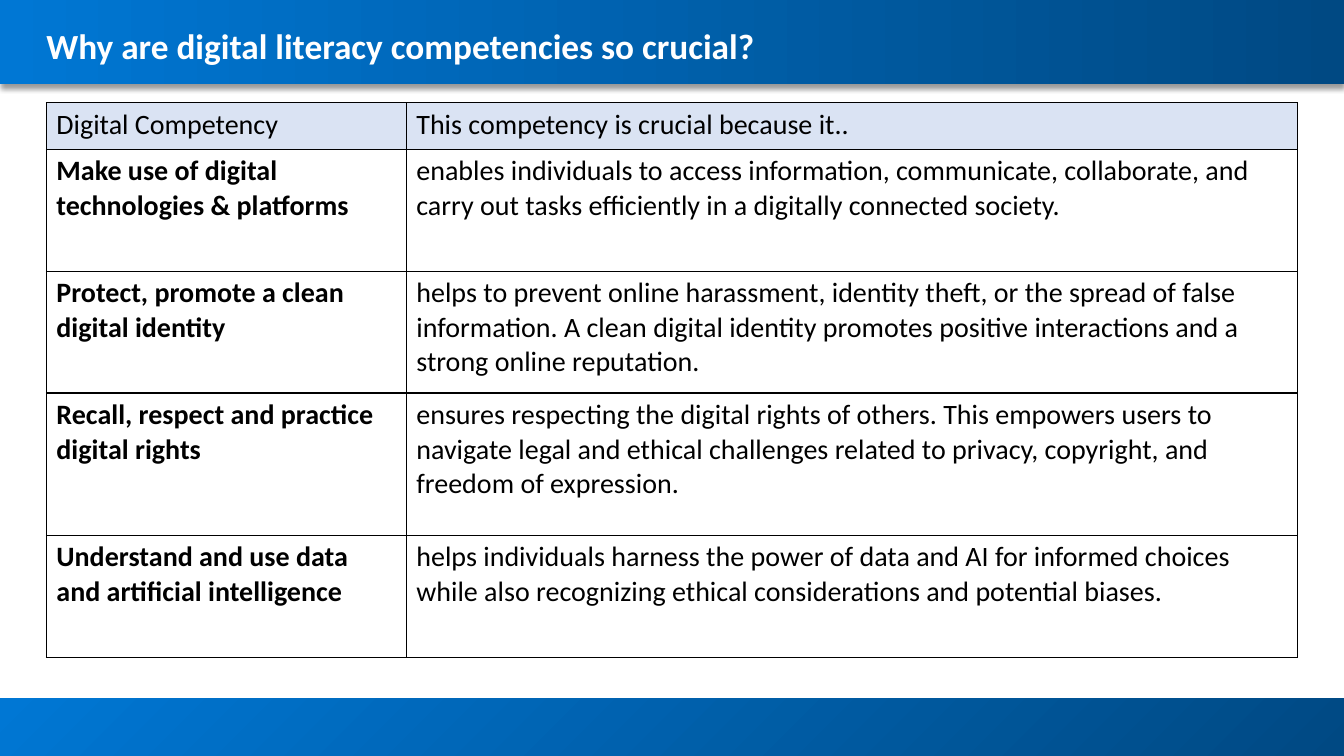
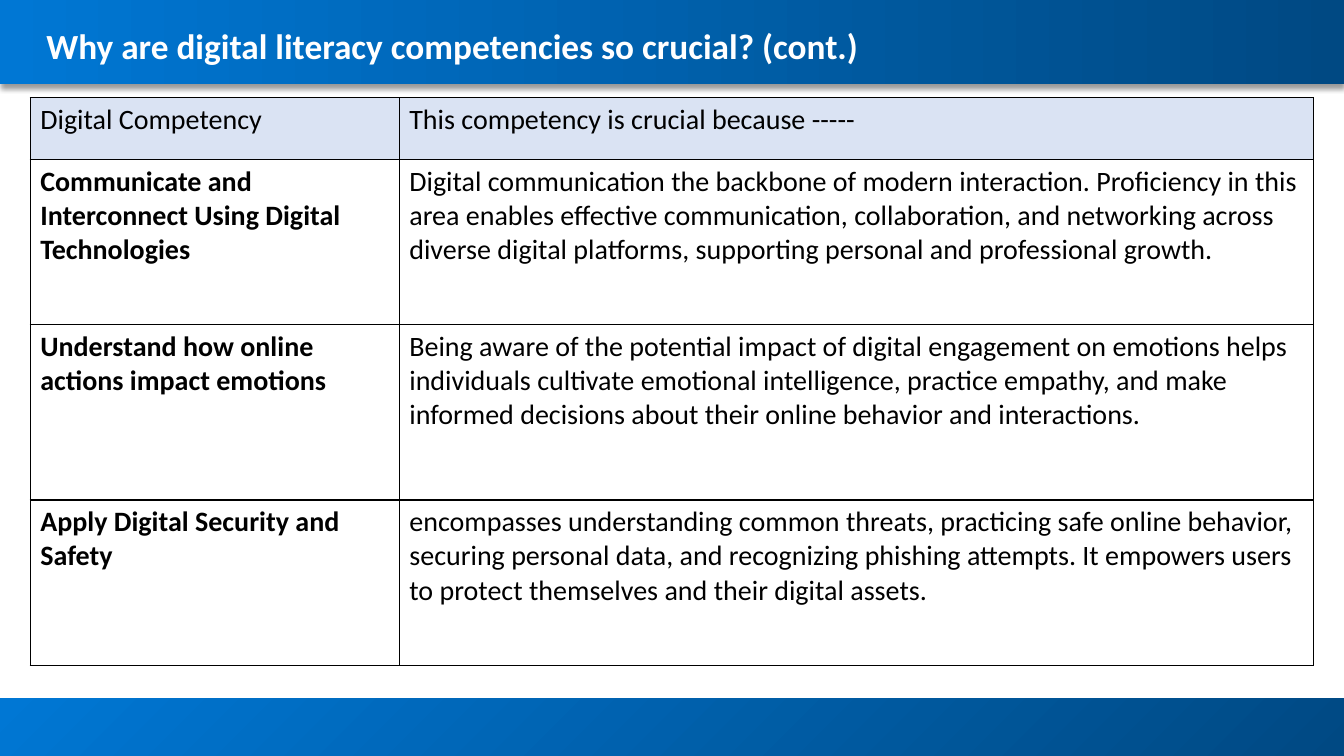
from lxml.etree import SubElement
from pptx import Presentation
from pptx.dml.color import RGBColor
from pptx.enum.shapes import MSO_SHAPE
from pptx.enum.text import MSO_ANCHOR, MSO_AUTO_SIZE, PP_ALIGN
from pptx.oxml import parse_xml
from pptx.oxml.ns import nsdecls, qn
from pptx.util import Inches, Pt

BLUE = RGBColor(0x00, 0x77, 0xD4)
NAVY = RGBColor(0x00, 0x49, 0x83)
PALE = RGBColor(0xDA, 0xE3, 0xF3)
WHITE = RGBColor(0xFF, 0xFF, 0xFF)
BLACK = RGBColor(0x00, 0x00, 0x00)
FONT = "Calibri"
WIDE, HIGH = 13.33, 7.5
HEAD_BOX = (0, 0, WIDE, 0.83)
FOOT_BOX = (0, 6.93, WIDE, 0.57)
TITLE_BOX = (0.46, 0.17, 12.41, 0.5)

TOPIC = "Why are digital literacy competencies so crucial?"
SLIDES = [
    {
        "title": TOPIC,
        "spot": (0.46, 1.02),
        "cols": (3.57, 8.84),
        "tall": (0.46, 1.21, 1.21, 1.41, 1.21),
        "rows": [
            ("Digital Competency", "This competency is crucial because it.."),
            ("Make use of digital technologies & platforms",
             "enables individuals to access information, communicate, collaborate, "
             "and carry out tasks efficiently in a digitally connected society."),
            ("Protect, promote a clean digital identity",
             "helps to prevent online harassment, identity theft, or the spread of "
             "false information. A clean digital identity promotes positive "
             "interactions and a strong online reputation."),
            ("Recall, respect and practice digital rights",
             "ensures respecting the digital rights of others. This empowers users "
             "to navigate legal and ethical challenges related to privacy, "
             "copyright, and freedom of expression."),
            ("Understand and use data and artificial intelligence",
             "helps individuals harness the power of data and AI for informed "
             "choices while also recognizing ethical considerations and potential "
             "biases."),
        ],
    },
    {
        "title": TOPIC + " (cont.)",
        "spot": (0.3, 0.97),
        "cols": (3.66, 9.07),
        "tall": (0.61, 1.64, 1.74, 1.64),
        "rows": [
            ("Digital Competency", "This competency is crucial because -----"),
            ("Communicate and Interconnect Using Digital Technologies",
             "Digital communication the backbone of modern interaction. Proficiency "
             "in this area enables effective communication, collaboration, and "
             "networking across diverse digital platforms, supporting personal and "
             "professional growth."),
            ("Understand how online actions impact emotions",
             "Being aware of the potential impact of digital engagement on emotions "
             "helps individuals cultivate emotional intelligence, practice empathy, "
             "and make informed decisions about their online behavior and "
             "interactions."),
            ("Apply Digital Security and Safety",
             "encompasses understanding common threats, practicing safe online "
             "behavior, securing personal data, and recognizing phishing attempts. "
             "It empowers users to protect themselves and their digital assets."),
        ],
    },
]


def add_run(para, text, size, color, bold):
    run = para.add_run()
    run.text = text
    font = run.font
    font.name, font.size, font.bold = FONT, Pt(size), bold
    font.color.rgb = color


def add_band(slide, box, first, last, angle):
    band = slide.shapes.add_shape(MSO_SHAPE.RECTANGLE, *map(Inches, box))
    band.shadow.inherit = False
    band.line.fill.background()
    band.fill.gradient()
    band.fill.gradient_angle = angle
    for stop, color in zip(band.fill.gradient_stops, (first, last)):
        stop.color.rgb = color
    return band


def add_shadow(shape):
    effects = shape.element.spPr.find(qn("a:effectLst"))
    effects.append(parse_xml(
        f'<a:outerShdw {nsdecls("a")} blurRad="{Pt(4)}" dist="{Pt(3)}" '
        'dir="5400000" algn="t" rotWithShape="0"><a:srgbClr val="000000">'
        '<a:alpha val="40000"/></a:srgbClr></a:outerShdw>'))


def dress_layout(layout, slide):
    """Put the shared bands on the layout, behind its title."""
    for holder in list(layout.placeholders):
        if holder.placeholder_format.idx != 0:
            holder.element.getparent().remove(holder.element)
    foot = add_band(slide, FOOT_BOX, NAVY, BLUE, 135)
    head = add_band(slide, HEAD_BOX, BLUE, NAVY, 0)
    add_shadow(head)
    for spot, band in enumerate((foot, head), start=2):
        layout.shapes.element.insert(spot, band.element)


def set_title(slide, text, box):
    title = slide.shapes.title
    title.left, title.top, title.width, title.height = map(Inches, box)
    frame = title.text_frame
    frame.margin_left = frame.margin_right = 0
    frame.margin_top = frame.margin_bottom = 0
    frame.vertical_anchor = MSO_ANCHOR.MIDDLE
    frame.auto_size = MSO_AUTO_SIZE.NONE
    frame.word_wrap = True
    para = frame.paragraphs[0]
    para.alignment = PP_ALIGN.LEFT
    para.line_spacing = 1.16
    add_run(para, text, 25.2, WHITE, True)


def set_edges(cell):
    props = cell._tc.get_or_add_tcPr()
    for side in ("lnL", "lnR", "lnT", "lnB"):
        line = SubElement(props, qn(f"a:{side}"), w=str(Pt(1)))
        fill = SubElement(line, qn("a:solidFill"))
        SubElement(fill, qn("a:srgbClr"), val=str(BLACK))


def add_grid(slide, spot, cols, tall, rows):
    box = (*spot, sum(cols), sum(tall))
    grid = slide.shapes.add_table(len(rows), len(cols), *map(Inches, box)).table
    grid.first_row = grid.horz_banding = False
    for col, width in zip(grid.columns, cols):
        col.width = Inches(width)
    for row, height in zip(grid.rows, tall):
        row.height = Inches(height)
    for r, texts in enumerate(rows):
        for c, text in enumerate(texts):
            cell = grid.cell(r, c)
            set_edges(cell)
            if r == 0:
                cell.fill.solid()
                cell.fill.fore_color.rgb = PALE
            else:
                cell.fill.background()
            # Competency names are bold below the header row
            add_run(cell.text_frame.paragraphs[0], text, 20, BLACK, r > 0 and c == 0)


def main():
    deck = Presentation()
    deck.slide_width, deck.slide_height = Inches(WIDE), Inches(HIGH)
    layout = deck.slide_layouts[5]
    for page, data in enumerate(SLIDES):
        slide = deck.slides.add_slide(layout)
        if page == 0:
            dress_layout(layout, slide)
        set_title(slide, data["title"], TITLE_BOX)
        add_grid(slide, data["spot"], data["cols"], data["tall"], data["rows"])
    deck.save("out.pptx")


if __name__ == "__main__":
    main()
